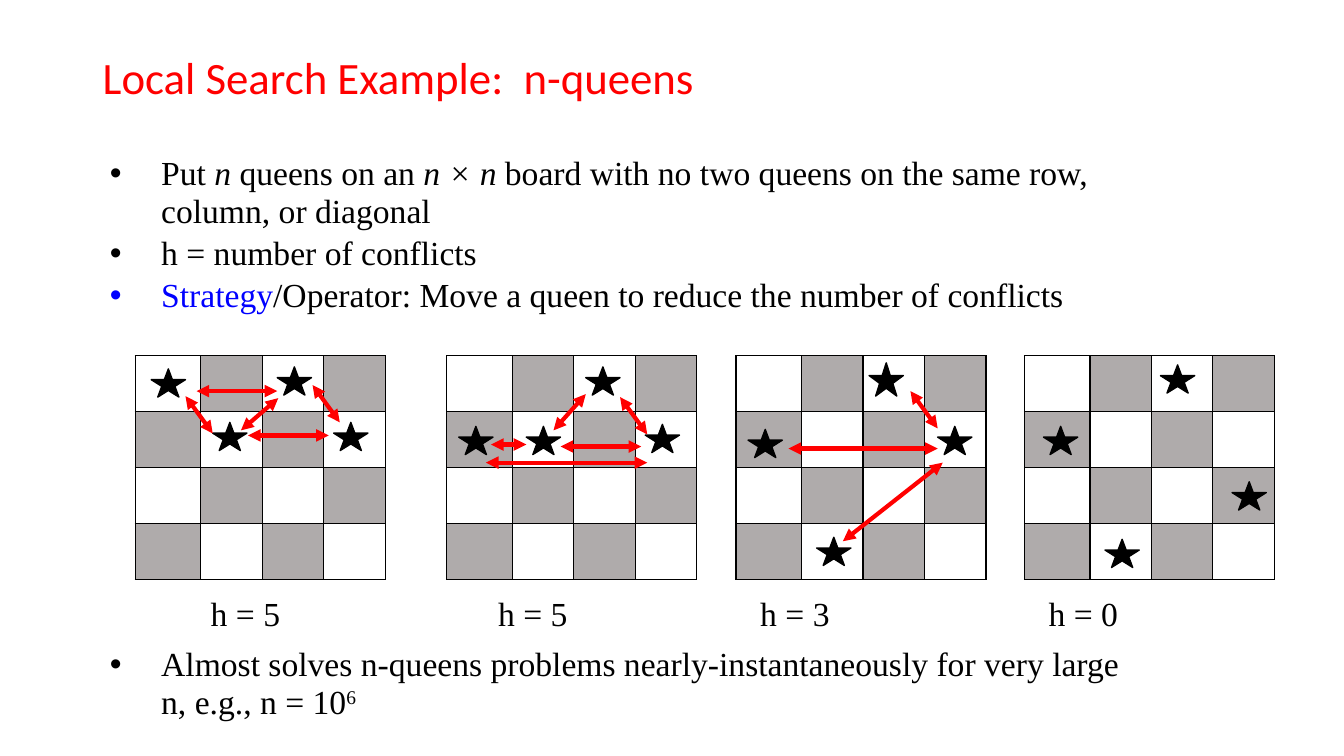
from lxml.etree import SubElement
from pptx import Presentation
from pptx.dml.color import RGBColor
from pptx.enum.shapes import MSO_CONNECTOR as Connector, MSO_SHAPE as Shape
from pptx.enum.text import MSO_ANCHOR as Anchor
from pptx.oxml import parse_xml
from pptx.oxml.ns import nsdecls, qn
from pptx.util import Inches, Pt

COLORS = {"black": "000000", "white": "FFFFFF", "gray": "AFABAB", "red": "FF0000", "blue": "0000FF"}
SERIF = "Times New Roman"
BOARD_TOP = 3.53
COLUMN_WIDTHS = [0.65, 0.61, 0.61, 0.61]
BOARD_HEIGHT = 2.22
STAR_WIDTH, STAR_HEIGHT = 0.34, 0.28

# Queens: left, top and, where it differs, height. Conflicts: x1, y1, x2, y2.
BOARDS = [
    {"left": 1.34, "label": "h = 5", "label_left": 2.09,
     "queens": [(1.5, 3.66), (2.75, 3.64), (2.11, 4.19), (3.31, 4.19)],
     "conflicts": [(2.39, 4.27, 2.76, 3.95), (2.46, 4.32, 3.26, 4.32), (1.95, 3.88, 2.75, 3.88),
                   (1.84, 3.93, 2.11, 4.3), (3.1, 3.82, 3.37, 4.19)]},
    {"left": 4.43, "label": "h = 5", "label_left": 4.94,
     "queens": [(4.55, 4.23), (5.22, 4.23), (5.81, 3.64), (6.4, 4.21)],
     "conflicts": [(6.15, 3.94, 6.42, 4.31), (5.81, 3.91, 5.49, 4.27), (5.56, 4.43, 6.36, 4.43),
                   (4.87, 4.41, 5.22, 4.41), (4.82, 4.59, 6.42, 4.59)]},
    {"left": 7.3, "label": "h = 3", "label_left": 7.54,
     "queens": [(7.42, 4.26), (8.1, 5.33), (8.62, 3.6, 0.33), (9.3, 4.23)],
     "conflicts": [(7.82, 4.45, 9.3, 4.45), (9.03, 3.88, 9.3, 4.25), (8.36, 5.37, 9.35, 4.59)]},
    {"left": 10.16, "label": "h = 0", "label_left": 10.4,
     "queens": [(10.35, 4.23), (10.96, 5.35), (11.51, 3.62), (12.22, 4.78)],
     "conflicts": []},
]

# Each paragraph is a list of runs: text, color, style.
GOAL_BULLETS = [
    [("Put ", "black", ""), ("n", "black", "italic"), (" queens on an ", "black", ""),
     ("n × n", "black", "italic"),
     (" board with no two queens on the same row, column, or diagonal", "black", "")],
    [("h = number of conflicts", "black", "")],
    [("Strategy", "blue", ""),
     ("/Operator: Move a queen to reduce the number of conflicts", "black", "")],
]
RESULT_BULLETS = [
    [("Almost solves n-queens problems nearly-instantaneously for very large n, e.g., n = 10",
      "black", ""), ("6", "black", "superscript")],
]


def add_run(para, text, size, font, color):
    span = para.add_run()
    span.text = text
    span.font.size = Pt(size)
    span.font.name = font
    span.font.color.rgb = RGBColor.from_string(COLORS[color])
    return span


def add_text_box(left, top, width, height):
    box = page.shapes.add_textbox(Inches(left), Inches(top), Inches(width), Inches(height))
    box.text_frame.word_wrap = True
    return box.text_frame


deck = Presentation()
deck.slide_width, deck.slide_height = Inches(13.33), Inches(7.5)
page = deck.slides.add_slide(deck.slide_layouts[6])

# Title
title = add_text_box(0.92, 0.26, 8.55, 1.07)
title.vertical_anchor = Anchor.MIDDLE
title.paragraphs[0].line_spacing = 0.9
add_run(title.paragraphs[0], "Local Search Example:  n-queens", 32, "Calibri", "red")

# Bullets above and below the boards
for top, height, bullets in [(1.49, 1.75, GOAL_BULLETS), (6.36, 0.85, RESULT_BULLETS)]:
    frame = add_text_box(0.99, top, 10.45, height)
    for index, runs in enumerate(bullets):
        para = frame.add_paragraph() if index else frame.paragraphs[0]
        para.line_spacing = 0.94
        if index:
            para.space_before = Pt(3)
        properties = para._p.get_or_add_pPr()
        properties.set("marL", str(Inches(0.51)))
        properties.set("indent", str(-Inches(0.51)))
        SubElement(properties, qn("a:buFont"), typeface="Arial")
        SubElement(properties, qn("a:buChar"), char="•")
        for text, color, style in runs:
            span = add_run(para, text, 24, SERIF, color)
            if style == "italic":
                span.font.italic = True
            elif style == "superscript":
                span.font._element.set("baseline", "30000")

# Boards with their queens, conflict arrows and labels
for board in BOARDS:
    table = page.shapes.add_table(4, 4, Inches(board["left"]), Inches(BOARD_TOP),
                                  Inches(sum(COLUMN_WIDTHS)), Inches(BOARD_HEIGHT)).table
    table.first_row = table.horz_banding = False
    for column, width in zip(table.columns, COLUMN_WIDTHS):
        column.width = Inches(width)
    for row in range(4):
        table.rows[row].height = Inches(BOARD_HEIGHT / 4)
        for col in range(4):
            cell = table.cell(row, col)
            cell.fill.solid()
            square = "gray" if (row + col) % 2 else "white"
            cell.fill.fore_color.rgb = RGBColor.from_string(COLORS[square])
            for position, side in enumerate(["lnL", "lnR", "lnT", "lnB"]):
                border = parse_xml(
                    f'<a:{side} {nsdecls("a")} w="{Pt(1)}"><a:solidFill>'
                    f'<a:srgbClr val="{COLORS["black"]}"/></a:solidFill></a:{side}>')
                cell._tc.get_or_add_tcPr().insert(position, border)

    for left, top, *height in board["queens"]:
        queen = page.shapes.add_shape(Shape.STAR_5_POINT, Inches(left), Inches(top),
                                      Inches(STAR_WIDTH), Inches(height[0] if height else STAR_HEIGHT))
        queen.shadow.inherit = False
        queen.fill.solid()
        queen.fill.fore_color.rgb = RGBColor.from_string(COLORS["black"])
        queen.line.color.rgb = RGBColor.from_string(COLORS["black"])
        queen.line.width = Pt(1)

    for ends in board["conflicts"]:
        arrow = page.shapes.add_connector(Connector.STRAIGHT, *[Inches(end) for end in ends])
        arrow.line.color.rgb = RGBColor.from_string(COLORS["red"])
        arrow.line.width = Pt(3)
        outline = arrow.line._get_or_add_ln()
        SubElement(outline, qn("a:headEnd"), type="triangle")
        SubElement(outline, qn("a:tailEnd"), type="triangle")
        SubElement(arrow._element.spPr, qn("a:effectLst"))

    label = add_text_box(board["label_left"], 5.88, 0.9, 0.38)
    label.margin_left = label.margin_right = label.margin_top = label.margin_bottom = 0
    add_run(label.paragraphs[0], board["label"], 24, SERIF, "black")

deck.save("out.pptx")
